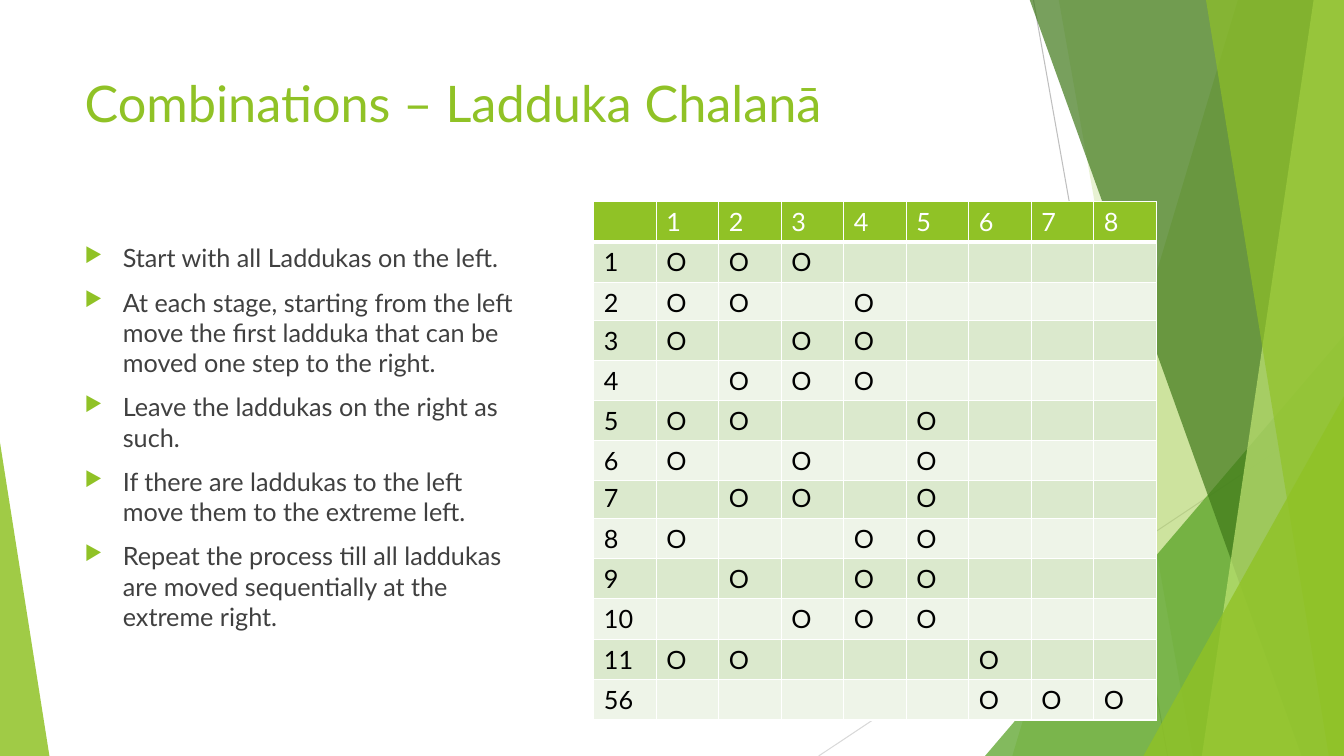
import dataclasses
import itertools

import lxml.etree
import pptx
import pptx.dml.color
import pptx.enum.shapes
import pptx.enum.text
import pptx.oxml
import pptx.oxml.ns
import pptx.util

PX = 9144  # EMU per px, 100 px to the inch
WIDTH, HEIGHT = 1333, 750
FONT = "Lato"
COLORS = {
    "lime": "90C226", "green": "54A021", "forest": "3F7819", "pale": "C0E474",
    "text": "404040", "black": "000000", "white": "FFFFFF",
    "odd": "DBE9CD", "even": "EEF4E8", "silver": "BFBFBF", "mist": "D9D9D9",
}
POINTS = [
    "Start with all Laddukas on the left.",
    "At each stage, starting from the left move the first ladduka that can be moved one step to the right.",
    "Leave the laddukas on the right as such.",
    "If there are laddukas to the left move them to the extreme left.",
    "Repeat the process till all laddukas are moved sequentially at the extreme right.",
]
PLACES = range(1, 9)
TABLE_LEFT, COLUMN, ROW = 589, 62, 40
STAGES = sorted(itertools.combinations(PLACES, 3), key=lambda held: held[::-1])


@dataclasses.dataclass
class Ray:
    start: tuple[int, int]
    end: tuple[int, int]
    color: str


@dataclasses.dataclass
class Facet:
    """A translucent band reaching the right edge of the slide."""
    top: int
    bottom: int
    color: str
    opacity: int


@dataclasses.dataclass
class Wedge:
    """A right triangle standing on the bottom edge; peak is 0 (left) or 1 (right)."""
    left: int
    top: int
    width: int
    peak: int
    color: str
    opacity: int


@dataclasses.dataclass
class StageTable:
    top: int
    stages: list[int]
    header: bool = False


DECORATION = [
    Ray((1025, 0), (1158, HEIGHT), "silver"),
    Ray((WIDTH, 403), (812, HEIGHT), "mist"),
    Facet(1228, 1004, "lime", 30),
    Facet(1050, 1183, "lime", 20),
    Wedge(977, 333, 356, 1, "green", 72),
    Facet(1021, 1291, "forest", 70),
    Facet(1303, 1192, "pale", 70),
    Facet(1196, 1318, "lime", 65),
    Wedge(1134, 393, 199, 1, "lime", 80),
    Wedge(0, 439, 49, 0, "lime", 85),
]
TABLES = [
    StageTable(200, [1, 2], header=True),
    StageTable(318, [3, 4]),
    StageTable(474, [7, 8, 9, 10, 11, 56]),
    StageTable(397, [5, 6]),
]


def rgb(color: str) -> pptx.dml.color.RGBColor:
    return pptx.dml.color.RGBColor.from_string(COLORS[color])


def add_xml(parent, tag: str, **attributes: str):
    return lxml.etree.SubElement(parent, pptx.oxml.ns.qn(tag), attributes)


def add_span(para, text: str, size: int, color: str) -> None:
    span = para.add_run()
    span.text = text
    span.font.name = FONT
    span.font.size = pptx.util.Pt(size)
    span.font.bold = False
    span.font.color.rgb = rgb(color)


def paint(shape, color: str, opacity: int) -> None:
    shape.shadow.inherit = False
    shape.line.fill.background()
    shape.fill.solid()
    shape.fill.fore_color.rgb = rgb(color)
    tint = next(shape.element.spPr.iter(pptx.oxml.ns.qn("a:srgbClr")))
    add_xml(tint, "a:alpha", val=str(opacity * 1000))


def add_ray(page, ray: Ray) -> None:
    line = page.shapes.add_connector(
        pptx.enum.shapes.MSO_CONNECTOR.STRAIGHT,
        *(value * PX for value in ray.start + ray.end))
    line.line.color.rgb = rgb(ray.color)
    line.line.width = pptx.util.Pt(0.75)
    add_xml(line.element.spPr, "a:effectLst")


def add_facet(page, facet: Facet) -> None:
    outline = page.shapes.build_freeform(facet.top, -1, scale=PX)
    outline.add_line_segments([(WIDTH, -1), (WIDTH, HEIGHT), (facet.bottom, HEIGHT)])
    paint(outline.convert_to_shape(), facet.color, facet.opacity)


def add_wedge(page, wedge: Wedge) -> None:
    shape = page.shapes.add_shape(
        pptx.enum.shapes.MSO_SHAPE.ISOSCELES_TRIANGLE, wedge.left * PX, wedge.top * PX,
        wedge.width * PX, (HEIGHT - wedge.top) * PX)
    shape.adjustments[0] = wedge.peak
    paint(shape, wedge.color, wedge.opacity)


def place_title(page) -> None:
    title = page.shapes.title
    title.left, title.top, title.width, title.height = (
        value * PX for value in (74, 67, 940, 144))
    title.text_frame.vertical_anchor = pptx.enum.text.MSO_ANCHOR.TOP
    para = title.text_frame.paragraphs[0]
    para.alignment = pptx.enum.text.PP_ALIGN.LEFT
    add_span(para, "Combinations – Ladduka Chalanā", 36, "lime")
    title.element.getparent().append(title.element)  # in front of the decoration


def add_points(page) -> None:
    box = page.shapes.add_textbox(*(value * PX for value in (74, 236, 458, 424)))
    frame = box.text_frame
    frame.word_wrap = True
    for index, point in enumerate(POINTS):
        para = frame.add_paragraph() if index else frame.paragraphs[0]
        para.space_before = pptx.util.Pt(10)
        add_span(para, point, 18, "text")
        settings = para._p.get_or_add_pPr()
        settings.set("marL", str(38 * PX))
        settings.set("indent", str(-38 * PX))
        add_xml(add_xml(settings, "a:buClr"), "a:srgbClr", val=COLORS["lime"])
        add_xml(settings, "a:buSzPct", val="80000")
        add_xml(settings, "a:buChar", char="▶")


def fill_cell(cell, text: str, fill: str, color: str, bottom: int) -> None:
    """Borders go in before the fill, as the schema orders them."""
    settings = cell._tc.get_or_add_tcPr()
    for side, points in (("L", 1), ("R", 1), ("T", 1), ("B", bottom)):
        border = add_xml(settings, f"a:ln{side}", w=str(pptx.util.Pt(points)))
        add_xml(add_xml(border, "a:solidFill"), "a:srgbClr", val=COLORS["white"])
    cell.fill.solid()
    cell.fill.fore_color.rgb = rgb(fill)
    if text:
        add_span(cell.text_frame.paragraphs[0], text, 18, color)


def add_stage_table(page, part: StageTable) -> None:
    rows = [(["", *map(str, PLACES)], "lime", "white", 3)] if part.header else []
    for stage in part.stages:
        held = STAGES[stage - 1]
        marks = ["O" if place in held else "" for place in PLACES]
        fill = "odd" if stage % 2 else "even"
        rows.append(([str(stage), *marks], fill, "black", 1))
    columns = len(PLACES) + 1
    table = page.shapes.add_table(
        len(rows), columns, TABLE_LEFT * PX, part.top * PX,
        columns * COLUMN * PX, len(rows) * ROW * PX).table
    for column in table.columns:
        column.width = COLUMN * PX
    for row, (texts, fill, color, bottom) in zip(table.rows, rows):
        for cell, text in zip(row.cells, texts):
            fill_cell(cell, text, fill, color, bottom)


def main() -> None:
    deck = pptx.Presentation()
    deck.slide_width, deck.slide_height = WIDTH * PX, HEIGHT * PX
    page = deck.slides.add_slide(deck.slide_layouts.get_by_name("Title Only"))
    painters = {Ray: add_ray, Facet: add_facet, Wedge: add_wedge}
    for item in DECORATION:
        painters[type(item)](page, item)
    place_title(page)
    add_points(page)
    for part in TABLES:
        add_stage_table(page, part)
    deck.save("out.pptx")


if __name__ == "__main__":
    main()
